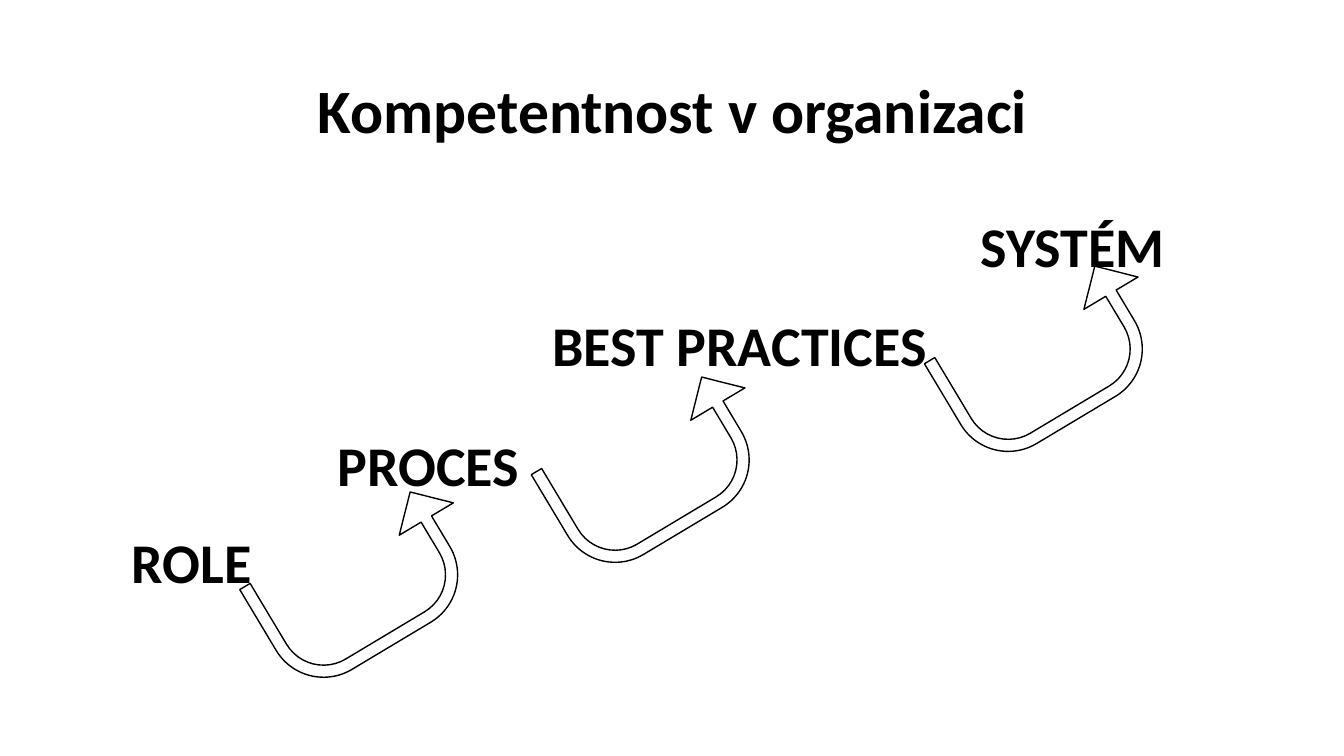
from pptx import Presentation
from pptx.dml.color import RGBColor
from pptx.enum.shapes import MSO_SHAPE
from pptx.enum.text import MSO_ANCHOR, MSO_AUTO_SIZE, PP_ALIGN
from pptx.util import Inches, Pt

UTURN = MSO_SHAPE.U_TURN_ARROW
MIDDLE, TOP = MSO_ANCHOR.MIDDLE, MSO_ANCHOR.TOP
GROW, FIXED = MSO_AUTO_SIZE.SHAPE_TO_FIT_TEXT, MSO_AUTO_SIZE.NONE
CENTER, LEFT = PP_ALIGN.CENTER, PP_ALIGN.LEFT

THEME = {
    "ink": RGBColor(0, 0, 0),
    "paper": RGBColor(255, 255, 255),
    "font": "Calibri",
    "title": Pt(44),
    "step": Pt(40),
    "line": Pt(1),
}

deck = Presentation()
deck.slide_width, deck.slide_height = Inches(13.33), Inches(7.5)
slide = deck.slides.add_slide(deck.slide_layouts[6])


def place(left, top, width, height):
    """Turn percent shares of the slide into lengths."""
    wide, high = deck.slide_width / 100, deck.slide_height / 100
    return int(left * wide), int(top * high), int(width * wide), int(height * high)


def add_text(text, box, size, frame_format, para_format):
    frame = slide.shapes.add_textbox(*place(*box)).text_frame
    para = frame.paragraphs[0]
    run = para.add_run()
    run.text = text
    font_format = {"name": THEME["font"], "size": size, "bold": True}
    for target, values in (
        (frame, frame_format), (para, para_format), (run.font, font_format)
    ):
        for name, value in values.items():
            setattr(target, name, value)
    run.font.color.rgb = THEME["ink"]


# Title
add_text(
    "Kompetentnost v organizaci", (0.68, 5.33, 98.8, 19.33), THEME["title"],
    {"word_wrap": True, "auto_size": FIXED, "vertical_anchor": MIDDLE},
    {"alignment": CENTER, "line_spacing": 0.9},
)

# Rising steps: text, left, top, width
STEPS = [
    ("ROLE", 9.08, 69.07, 10.5),
    ("PROCES", 24.38, 56.27, 15.15),
    ("BEST PRACTICES", 40.36, 40.4, 29.63),
    ("SYSTÉM", 72.24, 27.33, 15.3),
]
for text, left, top, width in STEPS:
    add_text(
        text, (left, top, width, 10.27), THEME["step"],
        {"word_wrap": False, "auto_size": GROW, "vertical_anchor": TOP},
        {"alignment": LEFT},
    )

# Arrows from each step to the next
BENDS = (0.096, 0.25, 0.25, 0.438, 0.971)
for left, top in [(19.05, 69.07), (40.74, 53.87), (69.99, 39.2)]:
    arrow = slide.shapes.add_shape(UTURN, *place(left, top, 16.95, 16.67))
    for index, bend in enumerate(BENDS):
        arrow.adjustments[index] = bend
    arrow.rotation = 149.1
    arrow.element.spPr.xfrm.set("flipH", "1")
    arrow.shadow.inherit = False
    arrow.fill.solid()
    arrow.fill.fore_color.rgb = THEME["paper"]
    arrow.line.color.rgb = THEME["ink"]
    arrow.line.width = THEME["line"]

deck.save("out.pptx")
